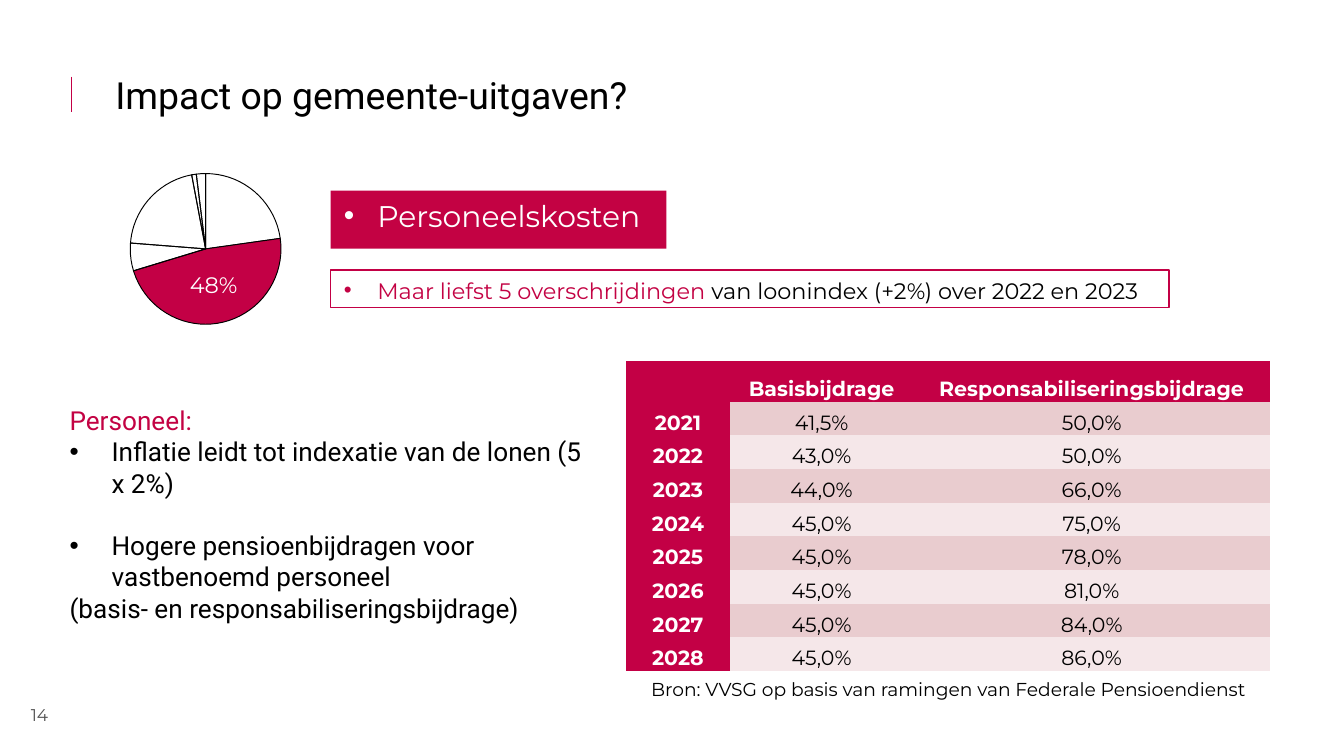
from dataclasses import dataclass

from lxml import etree
from pptx import Presentation
from pptx.chart import data as chart_data
from pptx.dml.color import RGBColor
from pptx.enum import chart as chart_enum, shapes, text
from pptx.oxml import ns, parse_xml
from pptx.util import Pt


@dataclass(frozen=True)
class Theme:
    accent: str = "C30045"
    highlight: str = "C30243"
    ink: str = "000000"
    white: str = "FFFFFF"
    grey: str = "535353"
    bands: tuple = ("E9CCCF", "F5E7E9")
    heading_font: str = "Roboto"
    body_font: str = "Montserrat"
    title_size: float = 20
    banner_size: float = 16
    body_size: float = 14
    note_size: float = 12
    table_size: float = 11
    source_size: float = 10
    page_size: float = 9.1


THEME = Theme()
NO_GRID_STYLE = "{2D5ABB26-0587-4C30-8999-92F81FD0307C}"
SPENDING_SHARES = (23, 48, 6, 21, 1, 2)
STAFF_SLICE = 1
CONTRIBUTIONS = (
    ("", "Basisbijdrage", "Responsabiliseringsbijdrage"),
    ("2021", "41,5%", "50,0%"),
    ("2022", "43,0%", "50,0%"),
    ("2023", "44,0%", "66,0%"),
    ("2024", "45,0%", "75,0%"),
    ("2025", "45,0%", "78,0%"),
    ("2026", "45,0%", "81,0%"),
    ("2027", "45,0%", "84,0%"),
    ("2028", "45,0%", "86,0%"),
)


def rgb(color):
    return RGBColor.from_string(color)


def style_font(font, size, name, color, bold=False):
    font.size, font.name, font.bold = Pt(size), name, bold
    font.color.rgb = rgb(color)


def add_bullet(paragraph, indent):
    properties = paragraph._p.get_or_add_pPr()
    properties.set("marL", str(Pt(indent)))
    properties.set("indent", str(-Pt(indent)))
    etree.SubElement(properties, ns.qn("a:buFont")).set("typeface", "Arial")
    etree.SubElement(properties, ns.qn("a:buChar")).set("char", "•")


def write(frame, content, size, name=THEME.body_font, color=THEME.ink, bold=False,
          align=text.PP_ALIGN.LEFT, indent=0, before=0, after=0, spacing=None):
    paragraph = frame.paragraphs[0]
    if paragraph.runs:
        paragraph = frame.add_paragraph()
    if indent:
        add_bullet(paragraph, indent)
    paragraph.alignment = align
    if before:
        paragraph.space_before = Pt(before)
    if after:
        paragraph.space_after = Pt(after)
    if spacing:
        paragraph.line_spacing = spacing
    pieces = [(content, color)] if isinstance(content, str) else content
    for piece, piece_color in pieces:
        run = paragraph.add_run()
        run.text = piece
        style_font(run.font, size, name, piece_color, bold)


def add_text_area(slide, left, top, width, height, anchor=text.MSO_ANCHOR.TOP):
    frame = slide.shapes.add_textbox(Pt(left), Pt(top), Pt(width), Pt(height)).text_frame
    frame.word_wrap = True
    frame.vertical_anchor = anchor
    return frame


def add_banner(slide, left, top, width, height, fill=None, outline=None):
    banner = slide.shapes.add_shape(
        shapes.MSO_SHAPE.RECTANGLE, Pt(left), Pt(top), Pt(width), Pt(height))
    banner.shadow.inherit = False
    if fill:
        banner.fill.solid()
        banner.fill.fore_color.rgb = rgb(fill)
    else:
        banner.fill.background()
    if outline:
        banner.line.color.rgb = rgb(outline)
        banner.line.width = Pt(0.75)
    else:
        banner.line.fill.background()
    frame = banner.text_frame
    frame.word_wrap = True
    frame.vertical_anchor = text.MSO_ANCHOR.TOP
    return frame


def add_title_rule(slide, x, top, bottom):
    rule = slide.shapes.add_connector(
        shapes.MSO_CONNECTOR.STRAIGHT, Pt(x), Pt(top), Pt(x), Pt(bottom))
    rule.line.color.rgb = rgb(THEME.accent)
    rule.line.width = Pt(0.75)
    etree.SubElement(rule._element.spPr, ns.qn("a:effectLst"))


def fill_cell(cell, content, fill=None, anchor=text.MSO_ANCHOR.BOTTOM, **format):
    cell.margin_left = cell.margin_right = Pt(3.6)
    cell.margin_top = cell.margin_bottom = 0
    cell.vertical_anchor = anchor
    if fill:
        cell.fill.solid()
        cell.fill.fore_color.rgb = rgb(fill)
    else:
        cell.fill.background()
    if content:
        write(cell.text_frame, content, align=text.PP_ALIGN.CENTER,
              spacing=1.15, after=10, **format)


def add_contribution_table(slide, left, top, widths, row_height):
    row_count = len(CONTRIBUTIONS) + 1
    frame = slide.shapes.add_table(row_count, len(widths), Pt(left), Pt(top),
                                   Pt(sum(widths)), Pt(row_height * row_count))
    frame._element.xpath(".//a:tableStyleId")[0].text = NO_GRID_STYLE
    table = frame.table
    table.first_row = table.horz_banding = False
    for column, width in zip(table.columns, widths):
        column.width = Pt(width)
    for row in table.rows:
        row.height = Pt(row_height)
    for r, values in enumerate(CONTRIBUTIONS):
        for c, value in enumerate(values):
            heading = r == 0 or c == 0
            fill_cell(table.cell(r, c), value,
                      fill=THEME.accent if heading else THEME.bands[(r - 1) % 2],
                      size=THEME.table_size, bold=heading,
                      color=THEME.white if heading else THEME.ink)
    source = table.cell(row_count - 1, 0)
    source.merge(table.cell(row_count - 1, len(widths) - 1))
    fill_cell(source, "Bron: VVSG op basis van ramingen van Federale Pensioendienst",
              anchor=text.MSO_ANCHOR.MIDDLE, size=THEME.source_size)


def place_plot(chart, x, y, width, height):
    plot_area = chart._chartSpace.xpath(".//c:plotArea")[0]
    for layout in plot_area.findall(ns.qn("c:layout")):
        plot_area.remove(layout)
    parts = "".join(f'<c:{tag} val="{value}"/>' for tag, value in (
        ("layoutTarget", "inner"), ("xMode", "edge"), ("yMode", "edge"),
        ("x", x), ("y", y), ("w", width), ("h", height)))
    plot_area.insert(0, parse_xml(
        f'<c:layout {ns.nsdecls("c")}><c:manualLayout>{parts}</c:manualLayout></c:layout>'))


def add_spending_pie(slide, left, top, width, height):
    spending = chart_data.CategoryChartData()
    spending.categories = [str(n + 1) for n in range(len(SPENDING_SHARES))]
    spending.add_series("Series 1", SPENDING_SHARES)
    chart = slide.shapes.add_chart(chart_enum.XL_CHART_TYPE.PIE, Pt(left), Pt(top),
                                   Pt(width), Pt(height), spending).chart
    chart.has_legend = chart.has_title = False
    style_font(chart.font, THEME.source_size, THEME.body_font, THEME.ink)
    place_plot(chart, 0.24, 0.08, 0.47, 0.68)
    chart.plots[0].vary_by_categories = False
    series = chart.plots[0].series[0]
    series.data_labels.show_value = False
    for index in range(len(SPENDING_SHARES)):
        piece = series.points[index].format
        piece.line.color.rgb = rgb(THEME.ink)
        piece.line.width = Pt(0.5)
        if index == STAFF_SLICE:
            piece.fill.solid()
            piece.fill.fore_color.rgb = rgb(THEME.accent)
        else:
            piece.fill.background()
    share = series.points[STAFF_SLICE].data_label
    style_font(share.font, THEME.note_size, THEME.body_font, THEME.white)
    share.position = chart_enum.XL_LABEL_POSITION.CENTER
    for tag, shown in (("showVal", "0"), ("showPercent", "1")):
        series._element.xpath(f".//c:dLbl/c:{tag}")[0].set("val", shown)


def add_staff_notes(slide):
    notes = add_text_area(slide, 30.2, 196.6, 297.4, 157)
    notes.margin_top = Pt(20)
    body = dict(size=THEME.body_size, name=THEME.heading_font)
    write(notes, "Personeel:", color=THEME.highlight, **body)
    write(notes, "Inflatie leidt tot indexatie van de lonen (5 x 2%)", indent=22.5, **body)
    write(notes, "Hogere pensioenbijdragen voor vastbenoemd personeel",
          indent=22.5, before=16.5, **body)
    write(notes, "(basis- en responsabiliseringsbijdrage)", **body)


def main():
    deck = Presentation()
    deck.slide_width, deck.slide_height = Pt(720), Pt(405)
    slide = deck.slides.add_slide(deck.slide_layouts[6])

    page = add_text_area(slide, 8.6, 374.4, 25.2, 16.6)
    page.margin_left = page.margin_right = page.margin_top = page.margin_bottom = Pt(2.9)
    write(page, "14", THEME.page_size, color=THEME.grey, align=text.PP_ALIGN.CENTER)
    add_title_rule(slide, 38.2, 41, 59.8)
    title = add_text_area(slide, 54.7, 38.2, 626.4, 24.5, text.MSO_ANCHOR.MIDDLE)
    write(title, "Impact op gemeente-uitgaven?", THEME.title_size, THEME.heading_font)

    add_staff_notes(slide)
    index_note = add_banner(slide, 177.1, 144.7, 449.3, 20.2, outline=THEME.accent)
    write(index_note, [("Maar liefst 5 overschrijdingen ", THEME.highlight),
                       ("van loonindex (+2%) over 2022 en 2023", THEME.ink)],
          THEME.note_size, indent=18)
    add_contribution_table(slide, 335.5, 193.6, (55.4, 98.6, 190.8), 18.05)
    add_spending_pie(slide, 28.1, 83.5, 172.8, 118.8)
    staff_costs = add_banner(slide, 177.1, 102.2, 180, 31, fill=THEME.highlight)
    write(staff_costs, "Personeelskosten", THEME.banner_size, color=THEME.white, indent=18)

    deck.save("out.pptx")


if __name__ == "__main__":
    main()
